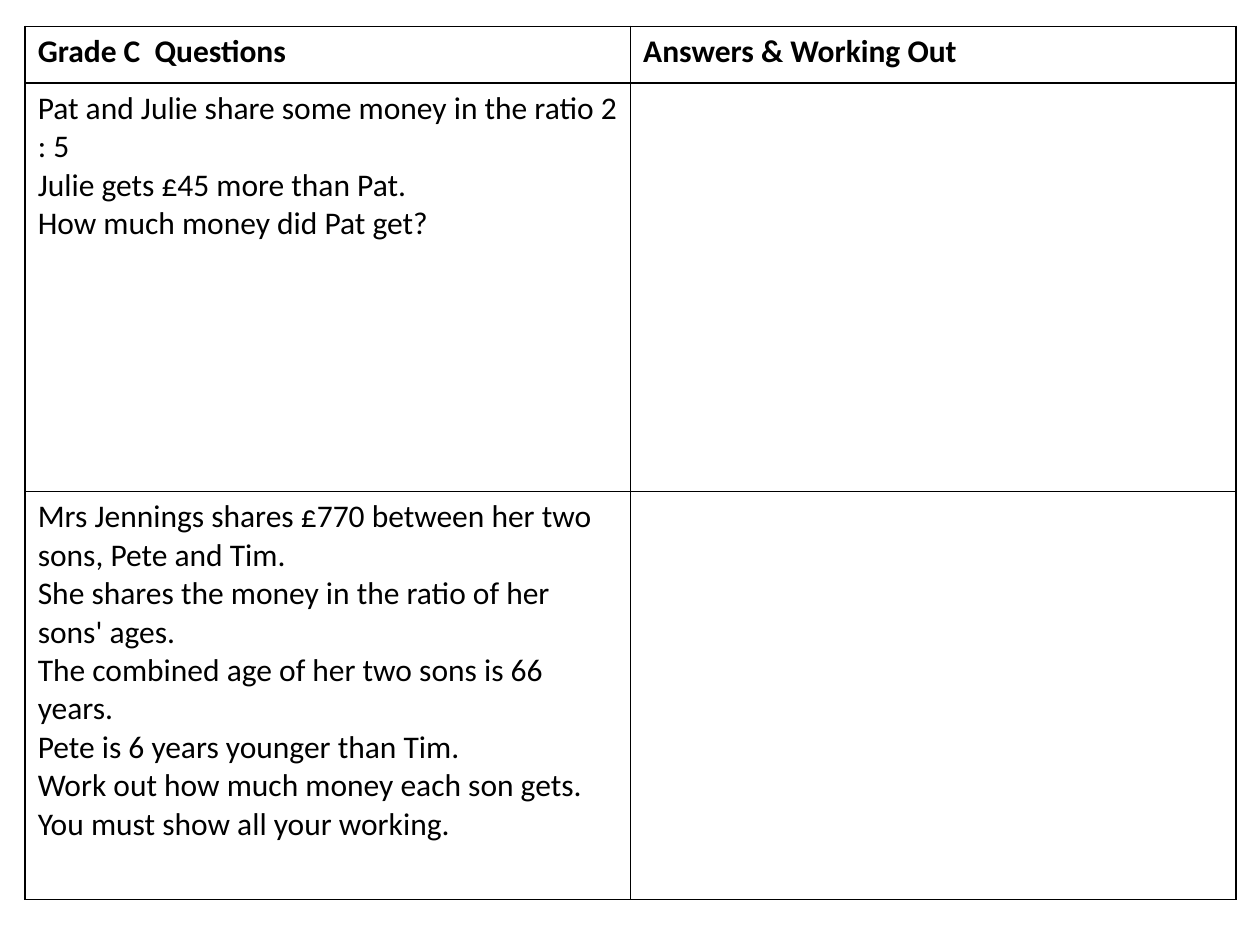
import dataclasses

import pptx
import pptx.dml.color
import pptx.oxml
import pptx.oxml.ns
import pptx.util


@dataclasses.dataclass(frozen=True)
class Theme:
    font: str = "Calibri"
    ink: str = "000000"
    size: int = 18
    border: float = 1


THEME = Theme()
HEADINGS = ["Grade C  Questions", "Answers & Working Out"]
QUESTIONS = [
    [
        "Pat and Julie share some money in the ratio 2 : 5\n"
        "Julie gets £45 more than Pat.",
        "How much money did Pat get?",
    ],
    [
        "Mrs Jennings shares £770 between her two sons, Pete and Tim.\n"
        "She shares the money in the ratio of her sons' ages.",
        "The combined age of her two sons is 66 years.\n"
        "Pete is 6 years younger than Tim.",
        "Work out how much money each son gets.\n"
        "You must show all your working.",
    ],
]


def write_text(frame, paragraphs, size=THEME.size, color=THEME.ink, bold=False):
    for index, wording in enumerate(paragraphs):
        paragraph = frame.paragraphs[0] if index == 0 else frame.add_paragraph()
        paragraph.text = wording
        for run in paragraph.runs:
            run.font.name = THEME.font
            run.font.size = pptx.util.Pt(size)
            run.font.bold = bold
            run.font.color.rgb = pptx.dml.color.RGBColor.from_string(color)


def rule_cell(cell):
    properties = cell._tc.get_or_add_tcPr()
    width = pptx.util.Pt(THEME.border)
    for side in ("lnL", "lnR", "lnT", "lnB"):
        properties.append(pptx.oxml.parse_xml(
            f'<a:{side} {pptx.oxml.ns.nsdecls("a")} w="{width}">'
            f'<a:solidFill><a:srgbClr val="{THEME.ink}"/></a:solidFill></a:{side}>'
        ))
    cell.fill.background()


def place_worksheet(slide, left, top, width, height):
    header_share = 0.065
    row_count, column_count = len(QUESTIONS) + 1, len(HEADINGS)
    worksheet = slide.shapes.add_table(
        row_count, column_count, left, top, width, height
    ).table
    worksheet.first_row = False
    worksheet.horz_banding = False

    header_height = int(height * header_share)
    question_height = (height - header_height) // len(QUESTIONS)
    for index, row in enumerate(worksheet.rows):
        row.height = question_height if index else header_height
    for column in worksheet.columns:
        column.width = width // column_count

    for cell in worksheet.iter_cells():
        rule_cell(cell)
    for column, heading in enumerate(HEADINGS):
        write_text(worksheet.cell(0, column).text_frame, [heading], bold=True)
    for row, question in enumerate(QUESTIONS, start=1):
        write_text(worksheet.cell(row, 0).text_frame, question)


def main():
    deck = pptx.Presentation()
    deck.slide_width = pptx.util.Inches(10)
    deck.slide_height = pptx.util.Inches(7.5)
    slide = deck.slides.add_slide(deck.slide_layouts[6])
    place_worksheet(
        slide,
        left=int(deck.slide_width * 0.02),
        top=int(deck.slide_height * 0.028),
        width=int(deck.slide_width * 0.961),
        height=int(deck.slide_height * 0.924),
    )
    deck.save("out.pptx")


if __name__ == "__main__":
    main()
